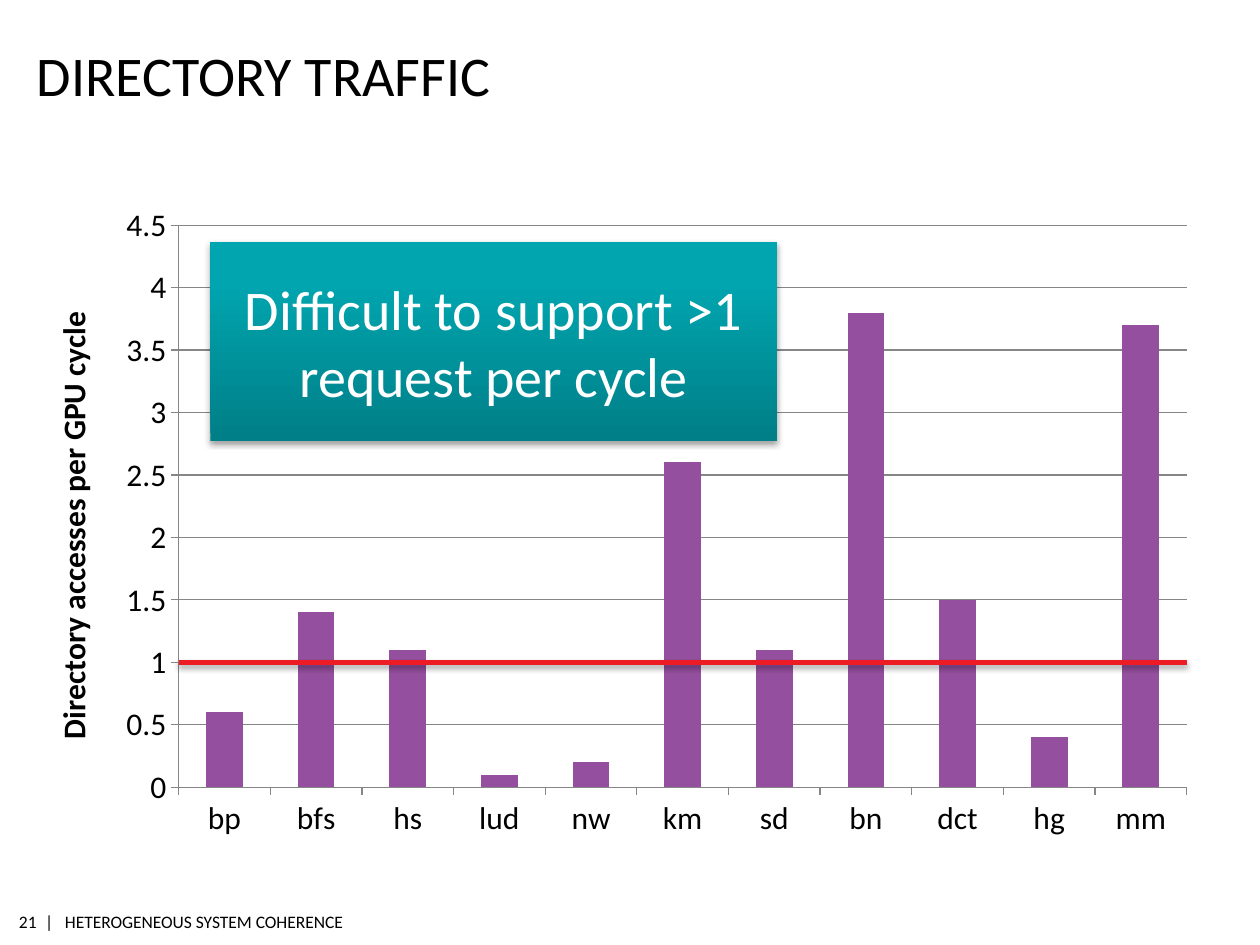
import lxml.etree
import pptx
import pptx.chart.data
import pptx.dml.color
import pptx.enum.chart
import pptx.enum.shapes
import pptx.enum.text
import pptx.oxml
import pptx.oxml.ns
import pptx.util

Cm = pptx.util.Cm
Pt = pptx.util.Pt
ANCHOR = pptx.enum.text.MSO_ANCHOR
ALIGN = pptx.enum.text.PP_ALIGN

FONT = "Calibri"
BLACK, WHITE, GRAY = "000000", "FFFFFF", "868686"
PURPLE, RED = "94509E", "ED1C24"
TEAL_DARK, TEAL = "007F87", "00A5AF"

ACCESSES = {
    "bp": 0.6, "bfs": 1.4, "hs": 1.1, "lud": 0.1, "nw": 0.2, "km": 2.6,
    "sd": 1.1, "bn": 3.8, "dct": 1.5, "hg": 0.4, "mm": 3.7,
}
PLOT = {"x": 0.119, "y": 0.051, "w": 0.851, "h": 0.826}
AXIS_TOP = 4.5


def color(value):
    return pptx.dml.color.RGBColor.from_string(value)


def set_attributes(target, values):
    for name, value in values.items():
        setattr(target, name, value)


def set_font(font, size, value=BLACK, bold=False):
    set_attributes(font, {"name": FONT, "size": Pt(size), "bold": bold})
    font.color.rgb = color(value)


def add_shadow(shape):
    """Append a soft downward shadow; fill and line must be set before."""
    properties = shape._element.spPr
    properties.append(pptx.oxml.parse_xml(
        f'<a:effectLst {pptx.oxml.ns.nsdecls("a")}>'
        f'<a:outerShdw blurRad="{Pt(3.1)}" dist="{Pt(1.8)}" dir="5400000" rotWithShape="0">'
        '<a:srgbClr val="000000"><a:alpha val="35000"/></a:srgbClr>'
        '</a:outerShdw></a:effectLst>'))


def add_text(slide, box, text, size, frame_format, align=ALIGN.LEFT):
    frame = slide.shapes.add_textbox(*box).text_frame
    set_attributes(frame, {"margin_left": 0, "margin_right": 0, **frame_format})
    paragraph = frame.paragraphs[0]
    paragraph.text = text
    paragraph.alignment = align
    set_font(paragraph.runs[0].font, size)


def add_footer(slide, left, top):
    height = Cm(0.66)
    frame_format = {
        "margin_top": Cm(0.1), "margin_bottom": Cm(0.1),
        "vertical_anchor": ANCHOR.MIDDLE, "word_wrap": False,
    }
    add_text(slide, (left, top, Cm(0.41), height), "21", 10, frame_format, ALIGN.RIGHT)
    add_text(slide, (left + Cm(0.58), top, Cm(6.58), height),
             "|   HETEROGENEOUS SYSTEM COHERENCE", 10, frame_format)


def set_plot_layout(chart):
    """Fix the inner plot area as fractions of the chart."""
    plot_area = chart._chartSpace.chart.plotArea
    for old in plot_area.findall(pptx.oxml.ns.qn("c:layout")):
        plot_area.remove(old)
    layout = lxml.etree.Element(pptx.oxml.ns.qn("c:layout"))
    manual = lxml.etree.SubElement(layout, pptx.oxml.ns.qn("c:manualLayout"))
    values = {"layoutTarget": "inner", "xMode": "edge", "yMode": "edge", **PLOT}
    for name, value in values.items():
        lxml.etree.SubElement(manual, pptx.oxml.ns.qn(f"c:{name}")).set("val", str(value))
    plot_area.insert(0, layout)


def add_traffic_chart(slide, box):
    data = pptx.chart.data.CategoryChartData()
    data.categories = list(ACCESSES)
    data.add_series("Series 1", list(ACCESSES.values()))
    chart = slide.shapes.add_chart(
        pptx.enum.chart.XL_CHART_TYPE.COLUMN_CLUSTERED, *box, data).chart
    set_attributes(chart, {"has_legend": False, "has_title": False})
    set_font(chart.font, 18)

    plot = chart.plots[0]
    set_attributes(plot, {"gap_width": 150, "vary_by_categories": False})
    fill = plot.series[0].format.fill
    fill.solid()
    fill.fore_color.rgb = color(PURPLE)

    value_axis = chart.value_axis
    set_attributes(value_axis, {
        "minimum_scale": 0, "maximum_scale": AXIS_TOP, "major_unit": 0.5,
        "has_major_gridlines": True, "has_title": True,
    })
    title = value_axis.axis_title.text_frame
    title.text = "Directory accesses per GPU cycle "
    set_font(title.paragraphs[0].runs[0].font, 18, bold=True)
    value_axis.tick_labels.number_format = "General"
    value_axis.tick_labels.number_format_is_linked = False

    for axis in (chart.category_axis, value_axis):
        axis.major_tick_mark = pptx.enum.chart.XL_TICK_MARK.OUTSIDE
    for part in (chart.category_axis, value_axis, value_axis.major_gridlines):
        part.format.line.color.rgb = color(GRAY)
        part.format.line.width = Pt(0.75)
    set_plot_layout(chart)


def add_limit_line(slide, box, limit):
    """Draw a line across the plot area of the chart box at the value limit."""
    left, top, width, height = box
    start = left + int(width * PLOT["x"])
    end = start + int(width * PLOT["w"])
    level = top + int(height * (PLOT["y"] + PLOT["h"] * (1 - limit / AXIS_TOP)))
    connector = slide.shapes.add_connector(
        pptx.enum.shapes.MSO_CONNECTOR.STRAIGHT, start, level, end, level)
    connector.line.color.rgb = color(RED)
    connector.line.width = Pt(3)
    add_shadow(connector)


def add_callout(slide, box):
    shape = slide.shapes.add_shape(
        pptx.enum.shapes.MSO_SHAPE.LINE_CALLOUT_1_ACCENT_BAR, *box)
    for index, value in enumerate((0.72, 1.05, 0.53, 1.48)):
        shape.adjustments[index] = value
    shape.fill.gradient()
    shape.fill.gradient_angle = 90
    for stop, position, value in zip(shape.fill.gradient_stops, (0, 0.8), (TEAL_DARK, TEAL)):
        stop.position = position
        stop.color.rgb = color(value)
    shape.line.fill.background()
    add_shadow(shape)

    frame = shape.text_frame
    set_attributes(frame, {"word_wrap": True, "vertical_anchor": ANCHOR.MIDDLE})
    paragraph = frame.paragraphs[0]
    paragraph.text = "Difficult to support >1 request per cycle"
    paragraph.alignment = ALIGN.CENTER
    set_font(paragraph.runs[0].font, 32, WHITE)


def main():
    presentation = pptx.Presentation()
    set_attributes(presentation, {"slide_width": Cm(25.4), "slide_height": Cm(19.05)})
    slide = presentation.slides.add_slide(presentation.slide_layouts[6])

    add_footer(slide, Cm(0.33), Cm(18.24))
    chart_box = (Cm(0.76), Cm(3.84), Cm(23.88), Cm(13.72))
    add_traffic_chart(slide, chart_box)
    add_text(slide, (Cm(0.74), Cm(0.86), Cm(21.34), Cm(1.32)), "DIRECTORY TRAFFIC", 32, {
        "margin_top": Cm(0.13), "margin_bottom": 0,
        "vertical_anchor": ANCHOR.BOTTOM, "word_wrap": True,
    })
    add_limit_line(slide, chart_box, 1)
    add_callout(slide, (Cm(4.24), Cm(4.88), Cm(11.43), Cm(4.01)))
    presentation.save("out.pptx")


if __name__ == "__main__":
    main()
